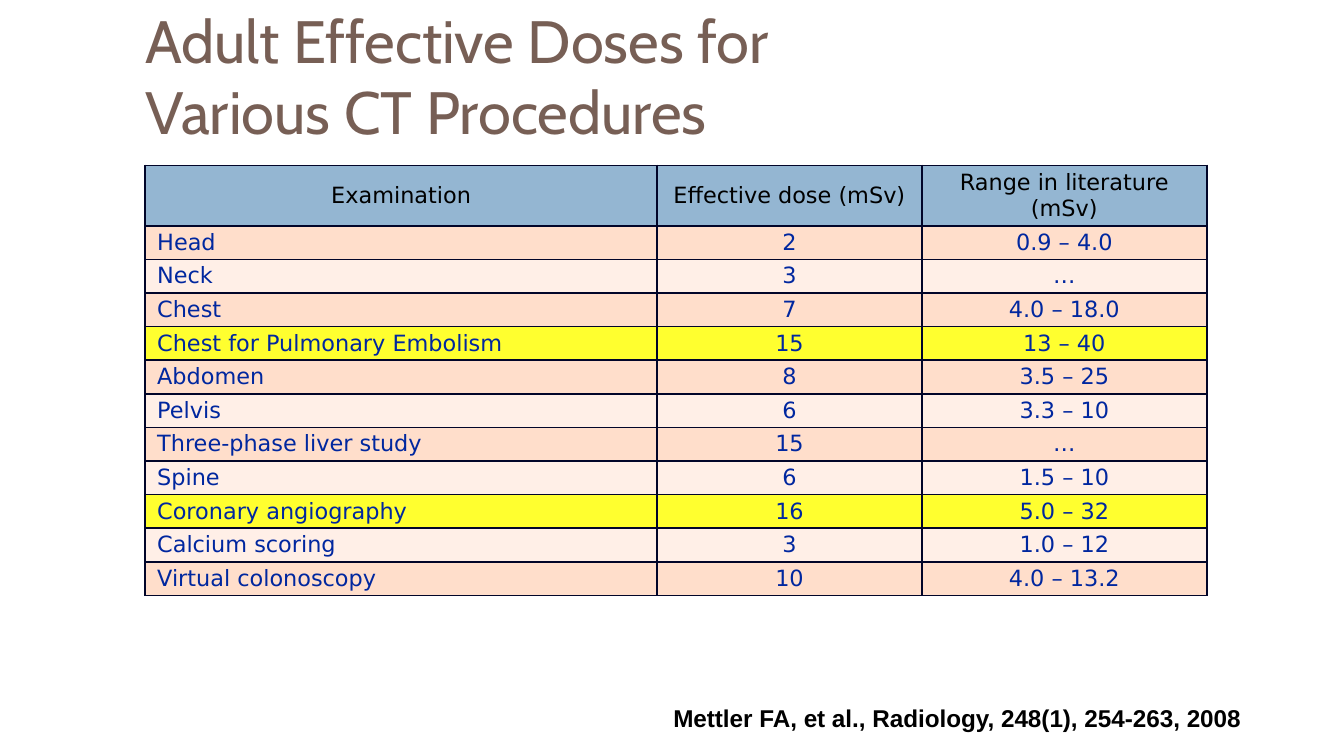
from lxml import etree
from pptx import Presentation
from pptx.dml.color import RGBColor
from pptx.enum.text import MSO_ANCHOR, PP_ALIGN
from pptx.oxml.ns import qn
from pptx.util import Inches, Pt

COLORS = {
    "title": "775F55",
    "header": "94B6D2",
    "stripe_dark": "FFDECB",
    "stripe_light": "FFEFE7",
    "highlight": "FFFF2F",
    "border": "010529",
    "body_text": "00279F",
    "black": "000000",
}

HEADINGS = ("Examination", "Effective dose (mSv)", "Range in literature (mSv)")
DOSES = [
    ("Head", "2", "0.9 – 4.0"),
    ("Neck", "3", "…"),
    ("Chest", "7", "4.0 – 18.0"),
    ("Chest for Pulmonary Embolism", "15", "13 – 40"),
    ("Abdomen", "8", "3.5 – 25"),
    ("Pelvis", "6", "3.3 – 10"),
    ("Three-phase liver study", "15", "…"),
    ("Spine", "6", "1.5 – 10"),
    ("Coronary angiography", "16", "5.0 – 32"),
    ("Calcium scoring", "3", "1.0 – 12"),
    ("Virtual colonoscopy", "10", "4.0 – 13.2"),
]
HIGHLIGHTED = {"Chest for Pulmonary Embolism", "Coronary angiography"}
COLUMN_WIDTHS = (3.81, 1.97, 2.12)
HEADER_HEIGHT, ROW_HEIGHT = 0.45, 0.25


def add_run(paragraph, text, font, size, color, bold=False):
    run = paragraph.add_run()
    run.text = text
    run.font.name = font
    run.font.size = Pt(size)
    run.font.bold = bold
    run.font.color.rgb = RGBColor.from_string(COLORS[color])


def add_borders(cell, color, width):
    properties = cell._tc.get_or_add_tcPr()
    for position, side in enumerate(("a:lnL", "a:lnR", "a:lnT", "a:lnB")):
        line = etree.Element(qn(side), w=str(Pt(width)))
        fill = etree.SubElement(line, qn("a:solidFill"))
        etree.SubElement(fill, qn("a:srgbClr"), val=COLORS[color])
        properties.insert(position, line)


prs = Presentation()
prs.slide_width = Inches(10)
prs.slide_height = prs.slide_width * 9 // 16
slide = prs.slides.add_slide(prs.slide_layouts[6])

# Title and citation frames
title = slide.shapes.add_textbox(Inches(1), Inches(-0.02), Inches(7.96), Inches(1.16)).text_frame
citation = slide.shapes.add_textbox(Inches(4.93), Inches(5.19), Inches(4.46), Inches(0.3)).text_frame
for frame in (title, citation):
    frame.margin_left = frame.margin_right = Inches(0.08)
    frame.margin_top = frame.margin_bottom = Inches(0.04)

title.word_wrap = True
title.vertical_anchor = MSO_ANCHOR.MIDDLE
heading = title.paragraphs[0]
add_run(heading, "Adult Effective Doses for ", "Cabin", 32, "title")
heading.add_line_break()
add_run(heading, "Various CT Procedures", "Cabin", 32, "title")

citation.word_wrap = False
add_run(citation.paragraphs[0], "Mettler FA, et al., Radiology, 248(1), 254-263, 2008",
        "Arial", 13, "black", bold=True)

# Dose table
rows = [HEADINGS, *DOSES]
dose_table = slide.shapes.add_table(
    len(rows), len(COLUMN_WIDTHS), Inches(1.08), Inches(1.23),
    Inches(sum(COLUMN_WIDTHS)), Inches(HEADER_HEIGHT + ROW_HEIGHT * len(DOSES)),
).table
for column, width in zip(dose_table.columns, COLUMN_WIDTHS):
    column.width = Inches(width)

for r, values in enumerate(rows):
    is_header = r == 0
    dose_table.rows[r].height = Inches(HEADER_HEIGHT if is_header else ROW_HEIGHT)
    if is_header:
        row_fill = "header"
    elif values[0] in HIGHLIGHTED:
        row_fill = "highlight"
    else:
        row_fill = "stripe_dark" if r % 2 else "stripe_light"

    for c, value in enumerate(values):
        cell = dose_table.cell(r, c)
        cell.fill.solid()
        cell.fill.fore_color.rgb = RGBColor.from_string(COLORS[row_fill])
        cell.vertical_anchor = MSO_ANCHOR.MIDDLE
        cell.margin_left = cell.margin_right = Inches(0.09)
        cell.margin_top = cell.margin_bottom = Inches(0.02)
        add_borders(cell, "border", 1)
        paragraph = cell.text_frame.paragraphs[0]
        paragraph.alignment = PP_ALIGN.CENTER if is_header or c else PP_ALIGN.LEFT
        add_run(paragraph, value, "DejaVu Sans", 12, "black" if is_header else "body_text")

prs.save("out.pptx")
